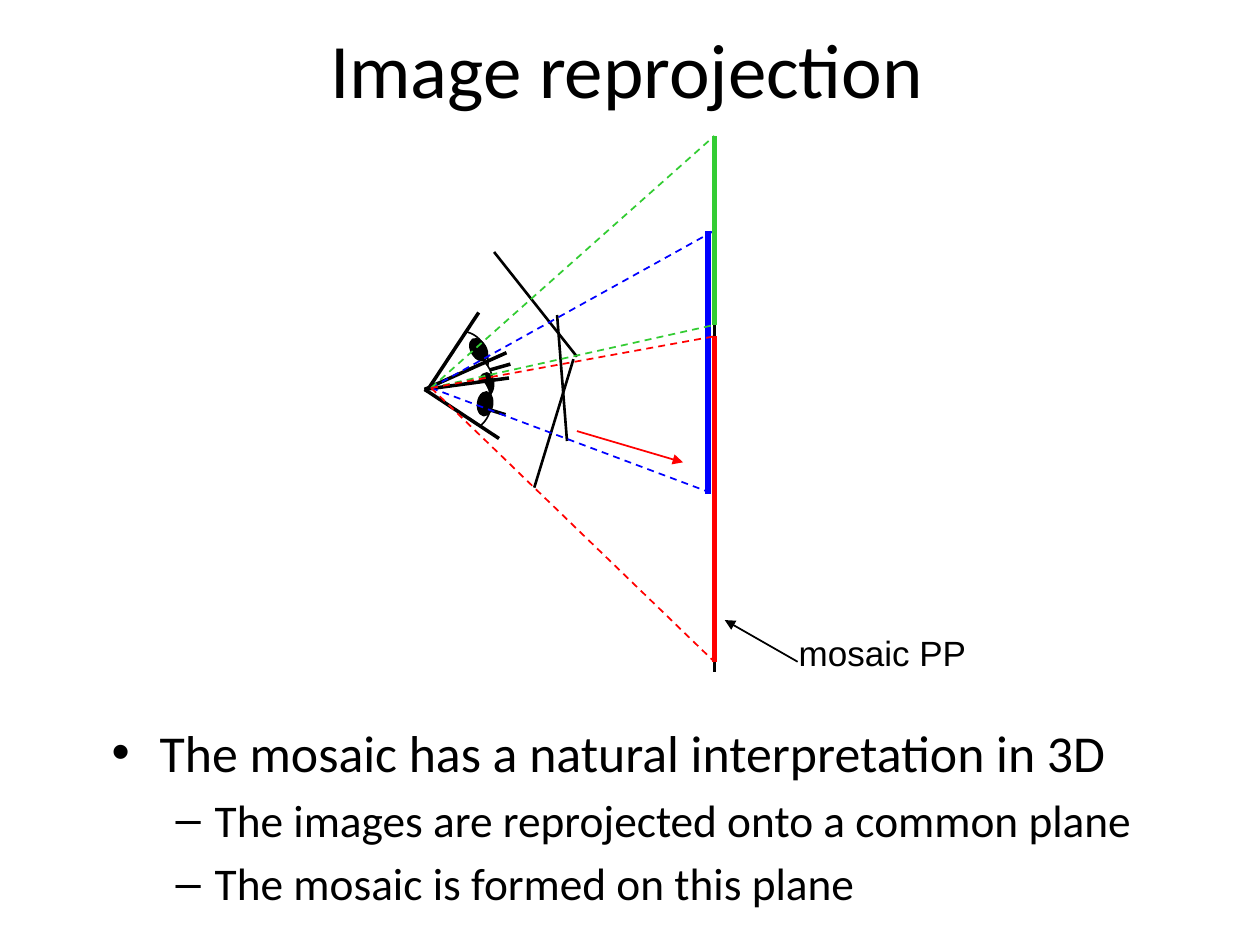
from lxml.etree import SubElement
from pptx import Presentation
from pptx.dml.color import RGBColor
from pptx.enum.dml import MSO_LINE
from pptx.enum.shapes import MSO_CONNECTOR, MSO_SHAPE
from pptx.enum.text import MSO_ANCHOR, PP_ALIGN
from pptx.oxml.ns import qn
from pptx.util import Cm, Pt

COLORS = {"black": "000000", "white": "FFFFFF", "blue": "0000FF",
          "green": "33CC33", "red": "FF0000"}
RGB = {name: RGBColor.from_string(value) for name, value in COLORS.items()}

deck = Presentation()
deck.slide_width, deck.slide_height = Cm(25.4), Cm(19.05)
page = deck.slides.add_slide(deck.slide_layouts[6])


def add_line(start, end, color, width, dashed=False, arrow=False):
    line = page.shapes.add_connector(
        MSO_CONNECTOR.STRAIGHT, *[Cm(value) for value in (*start, *end)])
    line.line.color.rgb = RGB[color]
    line.line.width = Pt(width)
    if dashed:
        line.line.dash_style = MSO_LINE.DASH
    if arrow:
        SubElement(line.line._get_or_add_ln(), qn("a:tailEnd"), type="triangle")
    SubElement(line._element.spPr, qn("a:effectLst"))


def add_outline(points, filled):
    corners = [(Cm(x), Cm(y)) for x, y in points]
    builder = page.shapes.build_freeform(*corners[0])
    builder.add_line_segments(corners[1:], close=filled)
    shape = builder.convert_to_shape()
    shape.shadow.inherit = False
    if filled:
        shape.fill.solid()
        shape.fill.fore_color.rgb = RGB["white"]
        shape.line.fill.background()
    else:
        shape.fill.background()
        shape.line.color.rgb = RGB["black"]
        shape.line.width = Pt(2)


wall_x = 14.4
add_line((wall_x, 2.74), (wall_x, 13.54), "black", 1.5)

label = page.shapes.add_textbox(Cm(16), Cm(12.73), Cm(3.81), Cm(1.07))
frame = label.text_frame
frame.word_wrap = False
frame.margin_left, frame.margin_right = Cm(0.1), Cm(0.1)
frame.margin_top = frame.margin_bottom = 0
para = frame.paragraphs[0]
para.text = "mosaic PP"
para.font.name, para.font.size = "Arial", Pt(20)
para.font.color.rgb = RGB["black"]
add_line((16.08, 13.34), (14.61, 12.5), "black", 1, arrow=True)

title = page.shapes.add_textbox(Cm(1.9), 0, Cm(21.59), Cm(2.74))
frame = title.text_frame
frame.word_wrap = True
frame.vertical_anchor = MSO_ANCHOR.MIDDLE
frame.margin_right = Cm(0.36)
para = frame.paragraphs[0]
para.text = "Image reprojection"
para.alignment = PP_ALIGN.CENTER
para.font.name, para.font.size = "Calibri", Pt(44)
para.font.color.rgb = RGB["black"]

body = page.shapes.add_textbox(Cm(1.9), Cm(14.4), Cm(21.59), Cm(4.65))
frame = body.text_frame
frame.word_wrap = True
frame.margin_right = Cm(0.36)
bullets = [
    (0, "The mosaic has a natural interpretation in 3D"),
    (1, "The images are reprojected onto a common plane"),
    (1, "The mosaic is formed on this plane"),
]
level_styles = [("•", 29.6, 1.07, -0.97), ("–", 25.9, 2.18, -0.79)]
for index, (level, text) in enumerate(bullets):
    mark, size, margin, indent = level_styles[level]
    para = frame.add_paragraph() if index else frame.paragraphs[0]
    para.text = text
    para.level = level
    para.space_before = Pt(size * 0.2)
    para.font.name, para.font.size = "Calibri", Pt(size)
    para.font.color.rgb = RGB["black"]
    properties = para._p.get_or_add_pPr()
    properties.set("marL", str(Cm(margin)))
    properties.set("indent", str(Cm(indent)))
    bullet_font = SubElement(properties, qn("a:buFont"), typeface="Arial")
    bullet_font.addnext(properties.makeelement(qn("a:buChar"), {"char": mark}))
    properties.append(properties.find(qn("a:defRPr")))

eyes = [
    {"plane": [(9.96, 5.08), (11.63, 7.19)], "apex": (8.66, 7.8),
     "lids": [(9.65, 6.3), (10.29, 7.34)], "wedge": False, "center": (9.25, 7.34),
     "curve": [(9.4, 6.71), (9.7, 6.78), (9.88, 7.11), (9.8, 7.47)],
     "pupil": (9.5, 6.81), "turn": 330},
    {"plane": [(11.23, 6.35), (11.43, 8.89)], "apex": (8.56, 7.85),
     "lids": [(10.21, 7.11), (10.19, 8.36)], "wedge": True, "center": (9.3, 7.8),
     "curve": [(9.78, 7.34), (9.98, 7.57), (9.96, 7.95), (9.7, 8.2)],
     "pupil": (9.65, 7.52), "turn": 3},
    {"plane": [(10.77, 9.83), (11.56, 7.24)], "apex": (8.56, 7.85),
     "lids": [(10.06, 8.84), (10.26, 7.62)], "wedge": True, "center": (9.27, 8.03),
     "curve": [(9.68, 8.56), (9.91, 8.38), (9.96, 7.98), (9.75, 7.7)],
     "pupil": (9.63, 7.9), "turn": 7},
]
steps = 16
for eye in eyes:
    add_line(*eye["plane"], "black", 1.5)
    arc = []
    for step in range(steps + 1):
        t = step / steps
        weights = ((1 - t) ** 3, 3 * t * (1 - t) ** 2, 3 * t ** 2 * (1 - t), t ** 3)
        arc.append([sum(weight * point[axis] for weight, point in
                        zip(weights, eye["curve"])) for axis in (0, 1)])
    if eye["wedge"]:
        add_outline([eye["apex"], *arc], filled=True)
    add_outline(arc, filled=False)
    add_outline([*arc, eye["center"]], filled=True)
    add_line(eye["apex"], eye["lids"][0], "black", 2)
    left, top = eye["pupil"]
    pupil = page.shapes.add_shape(MSO_SHAPE.OVAL, Cm(left), Cm(top), Cm(0.3), Cm(0.48))
    pupil.rotation = eye["turn"]
    pupil.shadow.inherit = False
    pupil.fill.solid()
    pupil.fill.fore_color.rgb = RGB["black"]
    pupil.line.color.rgb = RGB["black"]
    pupil.line.width = Pt(1)
    add_line(eye["apex"], eye["lids"][1], "black", 2)

viewpoint = (8.69, 7.82)
projections = [("blue", 14.27, 4.65, 9.96), ("green", wall_x, 2.74, 6.55),
               ("red", wall_x, 6.78, 13.34)]
for color, strip_x, top, bottom in projections:
    for height in (top, bottom):
        add_line(viewpoint, (wall_x, height), color, 1, dashed=True)
    add_line((strip_x, top), (strip_x, bottom), color, 3)
add_line((11.63, 8.69), (13.77, 9.32), "red", 1, arrow=True)

deck.save("out.pptx")
